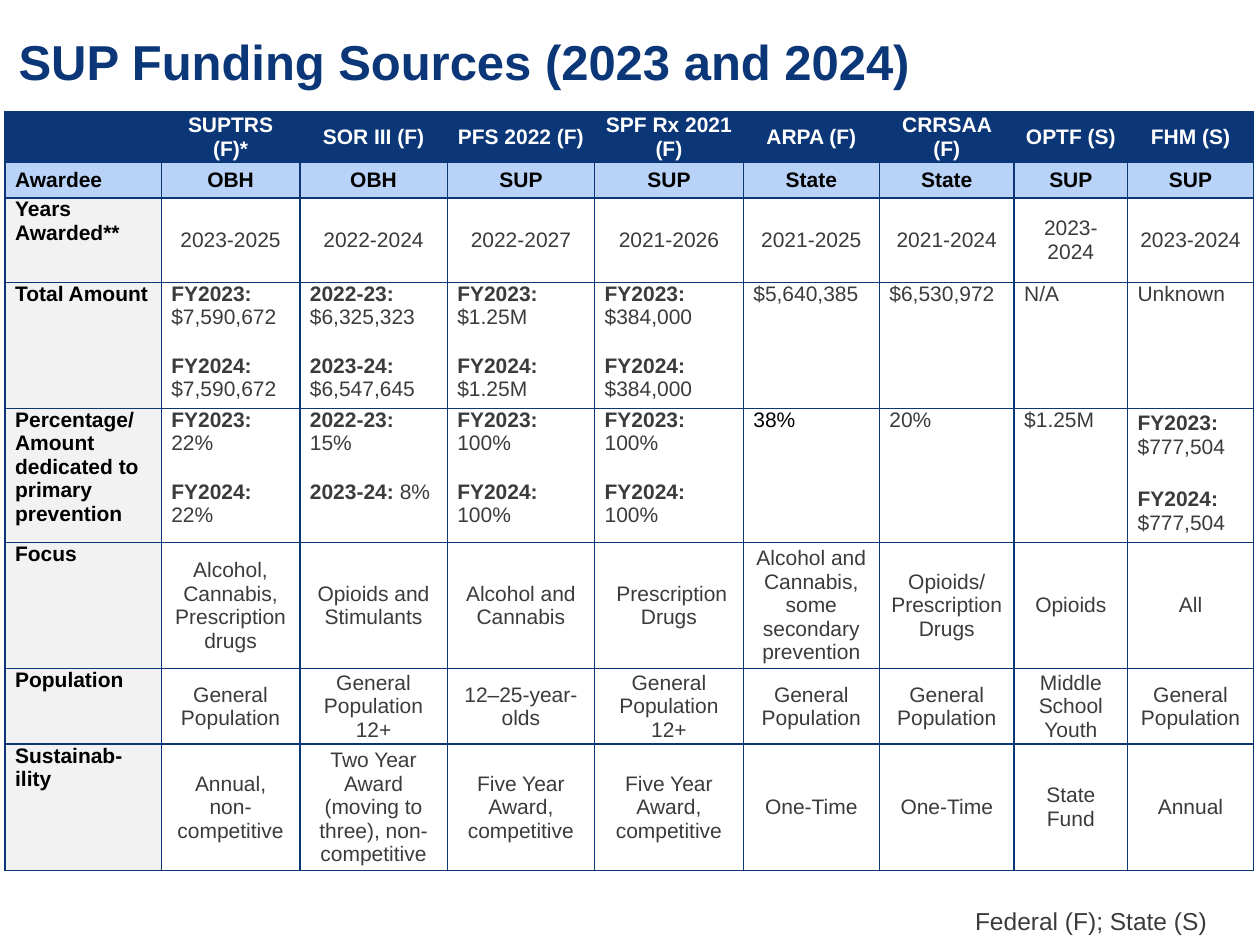
from dataclasses import dataclass

from lxml import etree
from pptx import Presentation
from pptx.dml.color import RGBColor
from pptx.enum.text import MSO_ANCHOR, PP_ALIGN
from pptx.oxml.ns import qn
from pptx.util import Inches, Pt

LEFT, CENTER = PP_ALIGN.LEFT, PP_ALIGN.CENTER
TOP, MIDDLE = MSO_ANCHOR.TOP, MSO_ANCHOR.MIDDLE


@dataclass(frozen=True)
class Theme:
    font: str = "Arial"
    navy: str = "0B3677"
    sky: str = "B9D2F8"
    gray: str = "F2F2F2"
    white: str = "FFFFFF"
    black: str = "000000"
    text: str = "3B3B3B"
    title: int = 28
    note: int = 14
    cell: int = 12
    border: int = 1
    gap: float = 14.3


T = Theme()

COL_WIDTHS = [1.24, 1.1, 1.17, 1.17, 1.18, 1.08, 1.07, 0.9, 1]
ROW_HEIGHTS = [0.4, 0.28, 0.67, 1, 1.06, 1, 0.6, 1]
TOTAL_ROW, SHARE_ROW = 3, 4
ARPA_COL, FHM_COL = 5, 8

# A line break starts a paragraph; the part up to a colon is a bold label
FUNDING = [
    ["", "SUPTRS (F)*", "SOR III (F)", "PFS 2022 (F)", "SPF Rx 2021 (F)",
     "ARPA (F)", "CRRSAA (F)", "OPTF (S)", "FHM (S)"],
    ["Awardee", "OBH", "OBH", "SUP", "SUP", "State", "State", "SUP", "SUP"],
    ["Years Awarded**", "2023-2025", "2022-2024", "2022-2027", "2021-2026",
     "2021-2025", "2021-2024", "2023-2024", "2023-2024"],
    ["Total Amount", "FY2023: $7,590,672\nFY2024: $7,590,672",
     "2022-23: $6,325,323\n2023-24: $6,547,645",
     "FY2023: $1.25M\nFY2024: $1.25M", "FY2023: $384,000\nFY2024: $384,000",
     "$5,640,385", "$6,530,972", "N/A", "Unknown"],
    ["Percentage/\nAmount dedicated to primary prevention",
     "FY2023: 22%\nFY2024: 22%", "2022-23: 15%\n2023-24: 8%",
     "FY2023: 100%\nFY2024: 100%", "FY2023: 100%\nFY2024: 100%",
     "38%", "20%", "$1.25M", "FY2023: $777,504\nFY2024: $777,504"],
    ["Focus", "Alcohol, Cannabis, Prescription drugs",
     "Opioids and Stimulants", "Alcohol and Cannabis", " Prescription Drugs",
     "Alcohol and Cannabis, some secondary prevention",
     "Opioids/\nPrescription Drugs", "Opioids", "All"],
    ["Population", "General Population", "General Population 12+",
     "12–25-year-olds", "General Population 12+", "General Population",
     "General Population", "Middle School Youth", "General Population"],
    ["Sustainab-ility", "Annual, non-competitive",
     "Two Year Award (moving to three), non-competitive",
     "Five Year Award, competitive", "Five Year Award, competitive",
     "One-Time", "One-Time", "State Fund", "Annual"],
]


def add_run(p, text, size, color, bold=False):
    r = p.add_run()
    r.text = text
    r.font.name = T.font
    r.font.size = Pt(size)
    r.font.bold = bold
    r.font.color.rgb = RGBColor.from_string(color)


def write_text(tf, text, *, size, color, bold=False, align=LEFT, leading=1.0,
               space_size=None):
    for i, line in enumerate(text.split("\n")):
        p = tf.paragraphs[0] if i == 0 else tf.add_paragraph()
        p.alignment = align
        p.line_spacing = leading
        label, colon, value = line.partition(": ")
        if colon:
            if i:
                p.space_before = Pt(T.gap)
            add_run(p, label + ":", size, color, True)
            add_run(p, " ", space_size or size, color)
            add_run(p, value, size, color)
        elif line:
            add_run(p, line, size, color, bold)


def add_text_box(slide, text, box, *, anchor=TOP, **fmt):
    tf = slide.shapes.add_textbox(*map(Inches, box)).text_frame
    tf.word_wrap = True
    tf.vertical_anchor = anchor
    write_text(tf, text, **fmt)


def set_borders(cell):
    tc_pr = cell._tc.get_or_add_tcPr()
    for side in ("a:lnL", "a:lnR", "a:lnT", "a:lnB"):
        ln = etree.SubElement(tc_pr, qn(side), w=str(Pt(T.border)))
        fill = etree.SubElement(ln, qn("a:solidFill"))
        etree.SubElement(fill, qn("a:srgbClr"), val=T.navy)


def cell_style(row, col):
    """Return the fill, anchor and text format for a grid position."""
    fill, color, bold, align, anchor = None, T.text, False, CENTER, MIDDLE
    if row == 0:
        fill, color, bold = T.navy, T.white, True
    elif row == 1:
        fill, color, bold = T.sky, T.black, True
        align = CENTER if col else LEFT
    elif col == 0:
        fill, color, bold, align, anchor = T.gray, T.black, True, LEFT, TOP
    elif row in (TOTAL_ROW, SHARE_ROW):
        align, anchor = LEFT, TOP
        if (row, col) == (SHARE_ROW, ARPA_COL):
            color = T.black
    wide = (row, col) == (SHARE_ROW, FHM_COL)
    return fill, anchor, dict(color=color, bold=bold, align=align,
                              space_size=T.note if wide else None)


def add_funding_table(slide, left, top):
    box = (left, top, sum(COL_WIDTHS), sum(ROW_HEIGHTS))
    table = slide.shapes.add_table(len(FUNDING), len(COL_WIDTHS),
                                   *map(Inches, box)).table
    table.first_row = table.horz_banding = False
    for column, width in zip(table.columns, COL_WIDTHS):
        column.width = Inches(width)
    for row, height in zip(table.rows, ROW_HEIGHTS):
        row.height = Inches(height)
    for i, texts in enumerate(FUNDING):
        for j, text in enumerate(texts):
            cell = table.cell(i, j)
            fill, anchor, fmt = cell_style(i, j)
            cell.margin_left = cell.margin_right = Inches(0.08)
            cell.margin_top = cell.margin_bottom = 0
            cell.vertical_anchor = anchor
            set_borders(cell)
            if fill:
                cell.fill.solid()
                cell.fill.fore_color.rgb = RGBColor.from_string(fill)
            else:
                cell.fill.background()
            write_text(cell.text_frame, text, size=T.cell, **fmt)


def main():
    prs = Presentation()
    prs.slide_width, prs.slide_height = Inches(10), Inches(7.5)
    slide = prs.slides.add_slide(prs.slide_layouts[6])

    # Title
    add_text_box(slide, "SUP Funding Sources (2023 and 2024)",
                 (0.05, -0.06, 9.37, 1.15), anchor=MIDDLE, size=T.title,
                 color=T.navy, bold=True, leading=0.9)
    # Funding grid
    add_funding_table(slide, 0.04, 0.89)
    # Key to the funding types
    add_text_box(slide, "Federal (F); State (S)", (7.64, 7.14, 2.36, 0.34),
                 size=T.note, color=T.text)

    prs.save("out.pptx")


if __name__ == "__main__":
    main()
